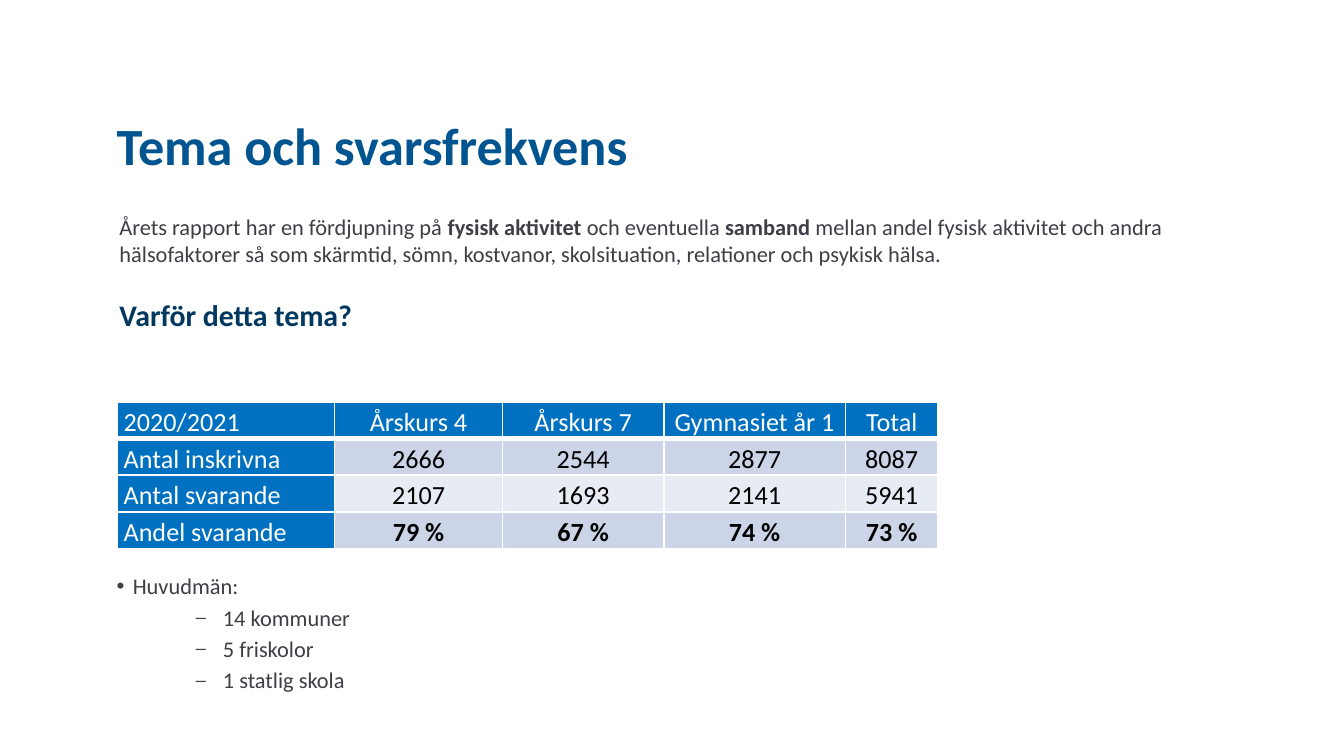
from dataclasses import dataclass

from lxml import etree
from pptx import Presentation
from pptx import util as u
from pptx.dml.color import RGBColor
from pptx.enum import text
from pptx.oxml import ns


@dataclass(frozen=True)
class Theme:
    font: str = "Calibri"
    title: str = "005490"
    heading: str = "003860"
    body: str = "403D45"
    header: str = "0070C0"
    bands: tuple = ("CCD5E8", "E7EBF4")
    white: str = "FFFFFF"
    black: str = "000000"
    title_size: int = 28
    heading_size: int = 16
    table_size: int = 14
    body_size: int = 12


T = Theme()


def add_run(p, words, size, color, bold=False):
    r = p.add_run()
    r.text = words
    r.font.name = T.font
    r.font.size = u.Pt(size)
    r.font.bold = bold
    r.font.color.rgb = RGBColor.from_string(color)


def add_text_frame(s, box):
    tf = s.shapes.add_textbox(*(u.Inches(v) for v in box)).text_frame
    tf.word_wrap = True
    return tf


def set_bullet(p, char, left, hang, size_pct=100):
    pPr = p._p.get_or_add_pPr()
    pPr.set("marL", str(u.Inches(left)))
    pPr.set("indent", str(-u.Inches(hang)))
    clr = etree.SubElement(pPr, ns.qn("a:buClr"))
    etree.SubElement(clr, ns.qn("a:srgbClr"), val=T.body)
    etree.SubElement(pPr, ns.qn("a:buSzPct"), val=str(size_pct * 1000))
    etree.SubElement(pPr, ns.qn("a:buFont"), typeface="Arial")
    etree.SubElement(pPr, ns.qn("a:buChar"), char=char)


def set_borders(cell, **widths):
    tcPr = cell._tc.get_or_add_tcPr()
    for side in "LRTB":
        ln = etree.SubElement(tcPr, ns.qn(f"a:ln{side}"), w=str(u.Pt(widths.get(side, 1))))
        fill = etree.SubElement(ln, ns.qn("a:solidFill"))
        etree.SubElement(fill, ns.qn("a:srgbClr"), val=T.white)


def add_title(s, box):
    add_run(add_text_frame(s, box).paragraphs[0], "Tema och svarsfrekvens",
            T.title_size, T.title, True)


def add_intro(s, box):
    tf = add_text_frame(s, box)
    p = tf.paragraphs[0]
    for words, bold in (
        ("Årets rapport har en fördjupning på ", False),
        ("fysisk aktivitet ", True),
        ("och eventuella ", False),
        ("samband", True),
        (" mellan andel fysisk aktivitet och andra hälsofaktorer så som skärmtid, "
         "sömn, kostvanor, skolsituation, relationer och psykisk hälsa.", False),
    ):
        add_run(p, words, T.body_size, T.body, bold)
    p = tf.add_paragraph()
    p.space_before = u.Pt(T.heading_size)
    add_run(p, "Varför detta tema?", T.heading_size, T.heading, True)


def add_response_table(s, box):
    rows = (
        ("2020/2021", "Årskurs 4", "Årskurs 7", "Gymnasiet år 1", "Total"),
        ("Antal inskrivna", "2666", "2544", "2877", "8087"),
        ("Antal svarande", "2107", "1693", "2141", "5941"),
        ("Andel svarande", "79 %", "67 %", "74 %", "73 %"),
    )
    widths = (1.62, 1.25, 1.2, 1.35, 0.69)
    table = s.shapes.add_table(len(rows), len(widths), *(u.Inches(v) for v in box)).table
    for column, width in zip(table.columns, widths):
        column.width = u.Inches(width)
    for i, row in enumerate(rows):
        table.rows[i].height = u.Inches(box[3] / len(rows))
        for j, words in enumerate(row):
            cell = table.cell(i, j)
            is_label = i == 0 or j == 0
            # A thicker rule separates the header from the data
            set_borders(cell, T=3 if i == 1 else 1, B=3 if i == 0 else 1)
            cell.fill.solid()
            cell.fill.fore_color.rgb = RGBColor.from_string(
                T.header if is_label else T.bands[(i - 1) % 2])
            cell.margin_left = cell.margin_right = u.Inches(0.05)
            cell.margin_top = cell.margin_bottom = 0
            cell.vertical_anchor = text.MSO_ANCHOR.BOTTOM
            p = cell.text_frame.paragraphs[0]
            p.line_spacing = 1.15
            p.alignment = text.PP_ALIGN.CENTER if j else text.PP_ALIGN.LEFT
            add_run(p, words, T.table_size, T.white if is_label else T.black,
                    i == len(rows) - 1 and j > 0)


def add_school_list(s, box):
    tf = add_text_frame(s, box)
    p = tf.paragraphs[0]
    set_bullet(p, "•", 0.12, 0.12)
    add_run(p, "Huvudmän:", T.body_size, T.body)
    for words in ("14 kommuner", "5 friskolor", "1 statlig skola"):
        p = tf.add_paragraph()
        p.level = 1
        set_bullet(p, "–", 0.79, 0.2, 80)
        p.space_before = u.Pt(0.2 * T.body_size)
        add_run(p, words, T.body_size, T.body)


def main():
    prs = Presentation()
    # Widescreen, 16:9
    prs.slide_width = u.Inches(10)
    prs.slide_height = prs.slide_width * 9 // 16
    s = prs.slides.add_slide(prs.slide_layouts[6])
    # Regions: left, top, width, height
    add_response_table(s, (0.87, 2.99, 6.11, 1.08))
    add_title(s, (0.77, 0.79, 6.54, 0.91))
    add_school_list(s, (0.77, 4.21, 6.54, 1.3))
    add_intro(s, (0.79, 1.54, 8.39, 0.93))
    prs.save("out.pptx")


if __name__ == "__main__":
    main()
